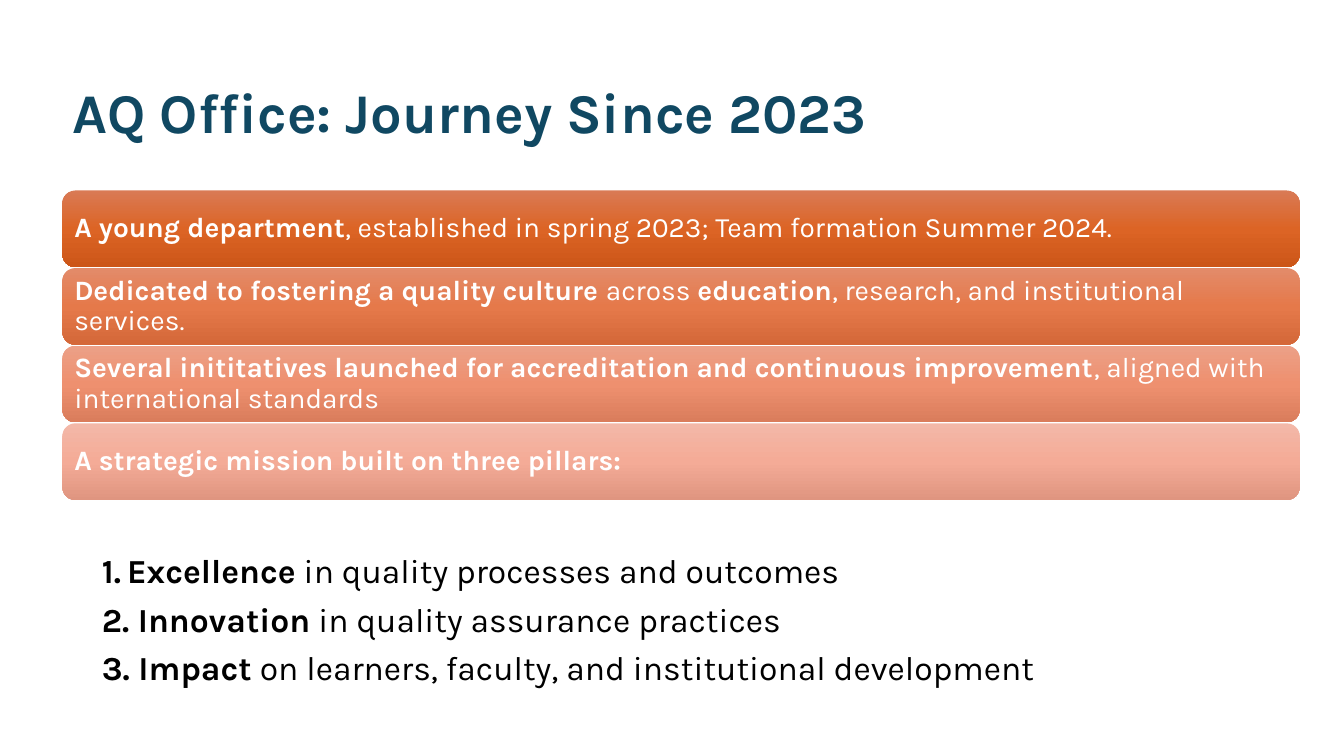
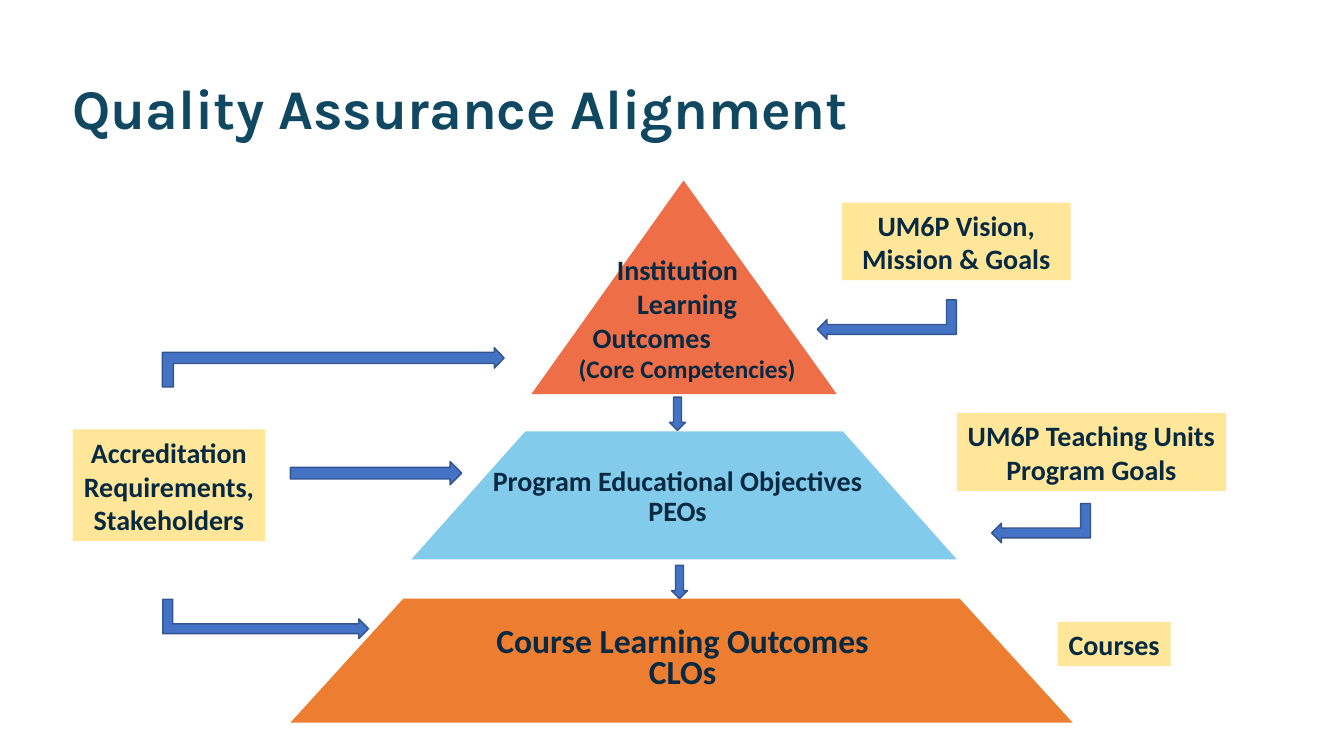
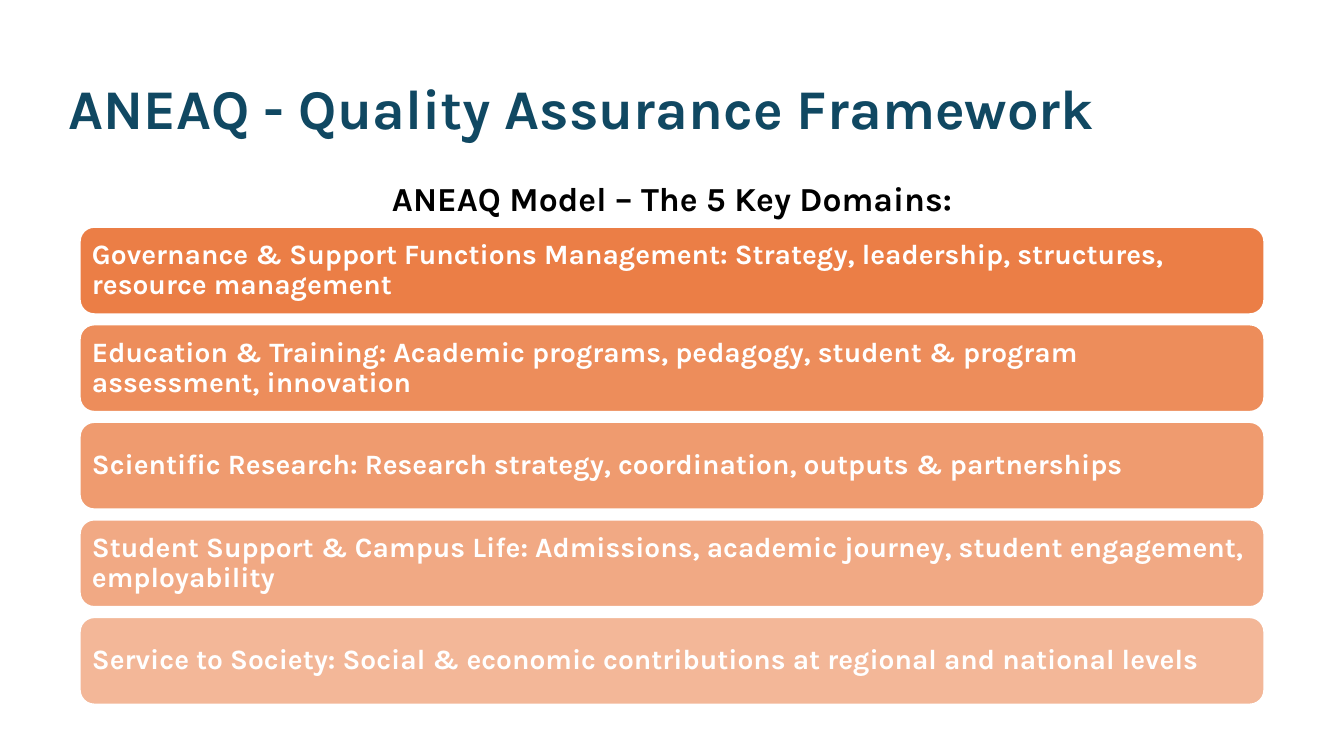
from copy import deepcopy
from dataclasses import dataclass

from lxml.etree import SubElement
from pptx import Presentation
from pptx.dml.color import RGBColor
from pptx.enum.shapes import MSO_SHAPE
from pptx.enum.text import MSO_ANCHOR, PP_ALIGN
from pptx.oxml.ns import qn
from pptx.util import Inches, Pt

STEP = Inches(0.1)  # one column or row of the slide grid


@dataclass(frozen=True)
class Theme:
    head: str = "Karla"
    body: str = "Calibri"
    title: int = 40
    large: int = 24
    base: int = 20
    small: int = 18
    navy: str = "104862"
    ink: str = "072942"
    black: str = "000000"
    white: str = "FFFFFF"
    note: str = "FFE699"
    arrow: str = "4472C4"
    edge: str = "325491"
    peak: str = "ED6E47"
    middle: str = "83CBEB"
    floor: str = "ED7D31"
    bar: str = "E97132"
    fades: tuple = (("D97A55", "DC6425", "CC5618"), ("E38B6A", "E5794A", "D46839"),
                    ("ECA087", "EE906F", "DA7D5C"), ("F3B8A8", "F4AB97", "DF9580"))


T = Theme()


@dataclass(frozen=True)
class Box:
    """A region in grid columns and rows."""
    x: float
    y: float
    w: float
    h: float

    def inner(self, x, y, w, h):
        return Box(self.x + x, self.y + y, w, h)

    def point(self, x, y):
        return round((self.x + x) * STEP), round((self.y + y) * STEP)

    def rows(self, count, gap):
        high = (self.h - gap * (count - 1)) / count
        return [self.inner(0, i * (high + gap), self.w, high) for i in range(count)]

    def swap(self):
        """Same centre, with width and height exchanged."""
        off = (self.w - self.h) / 2
        return self.inner(off, -off, self.h, self.w)

    def place(self):
        return [round(n * STEP) for n in (self.x, self.y, self.w, self.h)]


# ---- shared helpers ----
def color(code):
    return RGBColor.from_string(code)


def paint(shape, fill, line=None, width=1):
    shape.shadow.inherit = False
    shape.fill.solid()
    shape.fill.fore_color.rgb = color(fill)
    if line:
        shape.line.color.rgb = color(line)
        shape.line.width = Pt(width)
    else:
        shape.line.fill.background()


def fade(shape, codes):
    """Fill from top to bottom with three colours."""
    shape.fill.gradient()
    shape.fill.gradient_angle = 270
    stop = shape._element.spPr.find(".//" + qn("a:gs"))
    stop.addnext(deepcopy(stop))
    for i, (mark, code) in enumerate(zip(shape.fill.gradient_stops, codes)):
        mark.color.rgb = color(code)
        mark.position = i / 2


def clear(shape, share):
    """Set the opacity of a solid fill, in percent."""
    tone = shape._element.spPr.find(qn("a:solidFill") + "/" + qn("a:srgbClr"))
    SubElement(tone, qn("a:alpha"), val=str(share * 1000))


def write(shape, lines, size, font, ink, align=PP_ALIGN.LEFT, anchor=MSO_ANCHOR.TOP,
          inset=(0.1, 0.05), space=None, gap=0):
    """Write one paragraph per line; ** switches between bold and plain."""
    frame = shape.text_frame
    frame.word_wrap = True
    frame.vertical_anchor = anchor
    frame.margin_left = frame.margin_right = Inches(inset[0])
    frame.margin_top = frame.margin_bottom = Inches(inset[1])
    for i, line in enumerate(lines):
        para = frame.add_paragraph() if i else frame.paragraphs[0]
        para.alignment = align
        if space:
            para.line_spacing = space
        if i and gap:
            para.space_before = Pt(gap)
        for j, text in enumerate(line.split("**")):
            if text:
                run = para.add_run()
                run.text = text
                run.font.name, run.font.size = font, Pt(size)
                run.font.bold = j % 2 == 1
                run.font.color.rgb = color(ink)
    return frame.paragraphs


def label(slide, box, lines, *args, **opts):
    return write(slide.shapes.add_textbox(*box.place()), lines, *args, **opts)


def start(deck, box, text):
    """Add a blank slide with its title."""
    slide = deck.slides.add_slide(deck.slide_layouts[6])
    label(slide, box, [f"**{text}**"], T.title, T.head, T.navy,
          anchor=MSO_ANCHOR.MIDDLE, space=0.9)
    return slide


def stack(slide, box, lines, gap):
    """Stack one rounded bar per line, evenly spaced."""
    bars = []
    for cell, line in zip(box.rows(len(lines), gap), lines):
        bar = slide.shapes.add_shape(MSO_SHAPE.ROUNDED_RECTANGLE, *cell.place())
        write(bar, [line], T.base, T.head, T.white, anchor=MSO_ANCHOR.MIDDLE,
              inset=(0.08, 0.08), space=0.9)
        bars.append(bar)
    return bars


# ---- slide 1 ----
def pillars(slide, box):
    paras = label(slide, box, [
        "**Excellence** in quality processes and outcomes",
        "** Innovation** in quality assurance practices",
        "** Impact** on learners, faculty, and institutional development",
    ], T.large, T.head, T.black, inset=(0.39, 0.03), gap=5.6)
    for para in paras:
        props = para._p.get_or_add_pPr()
        props.set("marL", str(Inches(0.25)))
        props.set("indent", str(-Inches(0.25)))
        SubElement(props, qn("a:buFont"), typeface="+mj-lt")
        SubElement(props, qn("a:buAutoNum"), type="arabicPeriod")


def journey(deck):
    slide = start(deck, Box(6.2, 6.5, 124.6, 9.8), "AQ Office: Journey Since 2023")
    bars = stack(slide, Box(6.2, 18.9, 122.7, 30.7), [
        "**A young department**, established in spring 2023; Team formation Summer 2024.",
        "**Dedicated to fostering a quality culture **across **education**, research, "
        "and institutional services.",
        "**Several inititatives launched for accreditation and continuous improvement**, "
        "aligned with international standards",
        "**A strategic mission built on three pillars:**",
    ], 0.1)
    for bar, codes in zip(bars, T.fades):
        paint(bar, T.white)
        fade(bar, codes)
    pillars(slide, Box(6.2, 54.3, 122.7, 14))


# ---- slide 2 ----
def tier(slide, box, points, fill):
    first, *rest = [box.point(*p) for p in points]
    pen = slide.shapes.build_freeform(*first)
    pen.add_line_segments(rest, close=True)
    paint(pen.convert_to_shape(), fill)


def arrow(slide, box, kind, turn=0, flip=None, bends=()):
    """Draw an arrow that fills the box after its turn."""
    spot = box.swap() if turn else box
    shape = slide.shapes.add_shape(kind, *spot.place())
    paint(shape, T.arrow, T.edge)
    shape.rotation = turn
    if flip:
        shape._element.spPr.xfrm.set(flip, "1")
    for i, bend in enumerate(bends):
        shape.adjustments[i] = bend


def pyramid(slide, box):
    # Tiers
    for points, fill in (
        (((60.8, 0.4), (76, 21.6), (45.7, 21.6)), T.peak),
        (((45.1, 25.3), (76.6, 25.3), (87.9, 38), (33.8, 38)), T.middle),
        (((33, 41.9), (88.2, 41.9), (99.4, 54.2), (21.8, 54.2)), T.floor),
    ):
        tier(slide, box, points, fill)

    # Tier names
    names = label(slide, box.inner(49.2, 7.1, 24, 14.1),
                  ["**Institution**", "**Learning**", "**Outcomes**", "**(Core Competencies)**"],
                  T.base, T.body, T.ink)
    for para, left in zip(names, (0.4, 0.6, 0.16, 0.02)):
        para._p.get_or_add_pPr().set("marL", str(Inches(left)))
    names[-1].runs[0].font.size = Pt(T.small)
    for spot, lines, size in (
        ((41.2, 29.1, 38, 6.3), ["**Program Educational Objectives**", "**PEOs**"], T.base),
        ((39.4, 45.3, 42.6, 6.6), ["**Course Learning Outcomes**", "**CLOs**"], T.large),
    ):
        label(slide, box.inner(*spot), lines, size, T.body, T.ink, PP_ALIGN.CENTER,
              inset=(0.05, 0.03), space=Pt(17.5), gap=size * 0.2)

    # Notes
    for spot, lines in (
        ((76.5, 2.6, 22.7, 7.7), ["**UM6P Vision, Mission & Goals**"]),
        ((87.9, 23.5, 26.7, 7.7), ["**UM6P Teaching Units**", "**Program Goals**"]),
        ((97.9, 44.2, 11.2, 4.4), ["**Courses**"]),
        ((0.2, 25.1, 19.1, 11.1), ["**Accreditation**", "**Requirements,**", "**Stakeholders**"]),
    ):
        note = slide.shapes.add_shape(MSO_SHAPE.RECTANGLE, *box.inner(*spot).place())
        paint(note, T.note)
        write(note, lines, T.base, T.body, T.ink, PP_ALIGN.CENTER, MSO_ANCHOR.BOTTOM,
              inset=(0.05, 0.05))

    # Arrows
    down, right, bent = MSO_SHAPE.DOWN_ARROW, MSO_SHAPE.RIGHT_ARROW, MSO_SHAPE.BENT_UP_ARROW
    for spot, *style in (
        ((59.4, 21.9, 1.6, 3.3), down),
        ((59.6, 38.6, 1.6, 3.3), down),
        ((21.8, 28.3, 17, 2.3), right),
        ((9.15, 41.95, 20.4, 3.9), bent, 90),
        ((91.35, 32.45, 9.8, 3.9), bent, 270, "flipH"),
        ((74.05, 12.25, 13.8, 3.9), bent, 270, "flipH"),
        ((9.1, 17, 33.9, 3.9), bent, 270, "flipV", (0.28, 0.26, 0.25)),
    ):
        arrow(slide, box.inner(*spot), *style)


def aligned(deck):
    slide = start(deck, Box(6.2, 6.1, 125.7, 9.8), "Quality Assurance Alignment")
    pyramid(slide, Box(7, 17.5, 115, 55))


# ---- slide 3 ----
def domains(deck):
    slide = start(deck, Box(5.8, 6.1, 125.8, 9.8), "ANEAQ - Quality Assurance Framework")
    label(slide, Box(17.5, 15.2, 98.3, 6.5), ["**ANEAQ Model – The 5 Key Domains:**"],
          T.large, T.head, T.black, PP_ALIGN.CENTER, space=1.5)
    bars = stack(slide, Box(7.9, 22.5, 117.5, 47.4), [
        "**Governance & Support Functions Management: Strategy, leadership, structures, "
        "resource management**",
        "**Education & Training: Academic programs, pedagogy, student & program "
        "assessment, innovation**",
        "**Scientific Research: Research strategy, coordination, outputs & partnerships**",
        "**Student Support & Campus Life: Admissions, academic journey, student engagement, "
        "employability**",
        "**Service to Society: Social & economic contributions at regional and national levels**",
    ], 1)
    for i, bar in enumerate(bars):
        paint(bar, T.bar, T.white, 1.5)
        clear(bar, 90 - 10 * i)


def main():
    deck = Presentation()
    deck.slide_width, deck.slide_height = Inches(13.33), Inches(7.5)
    for build in (journey, aligned, domains):
        build(deck)
    deck.save("out.pptx")


if __name__ == "__main__":
    main()
